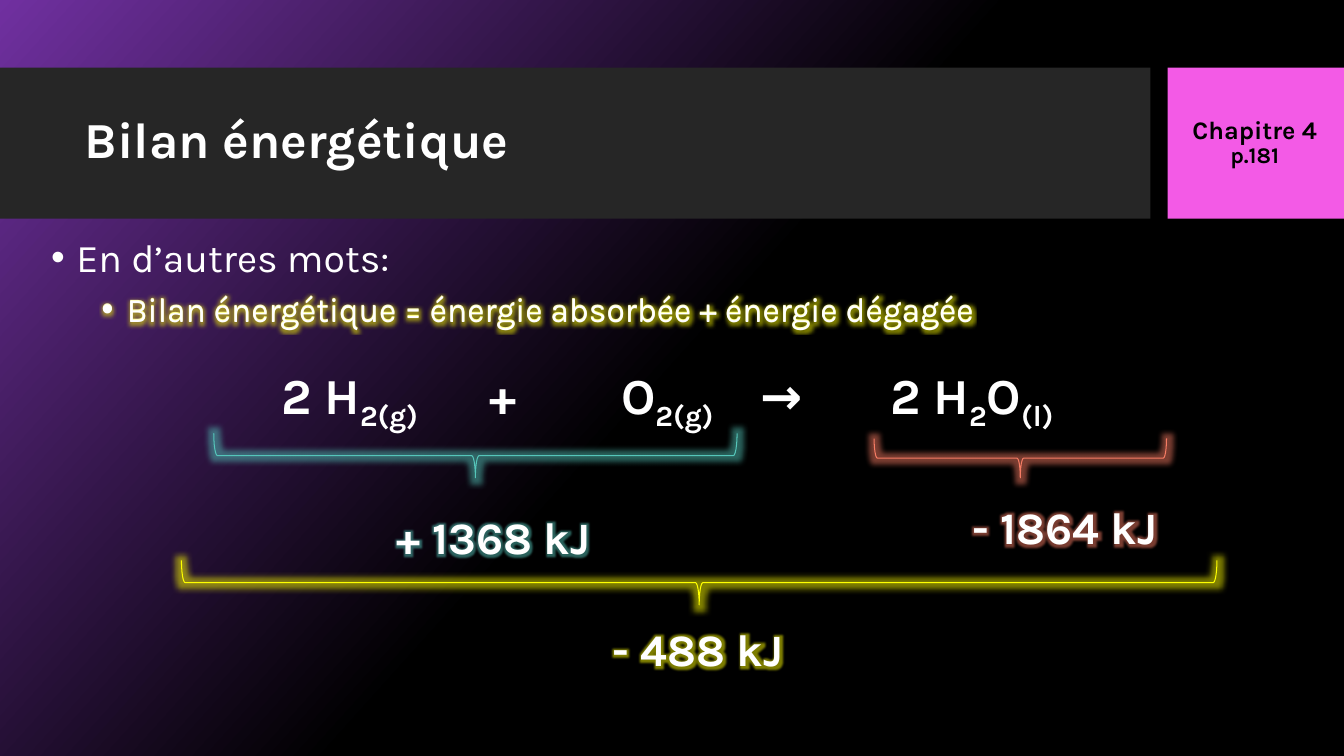
import pptx
import pptx.util
import pptx.dml.color
import pptx.enum.shapes
import pptx.enum.text
import pptx.oxml
import pptx.oxml.ns

Inches, Pt = pptx.util.Inches, pptx.util.Pt
RGBColor = pptx.dml.color.RGBColor
SHAPE = pptx.enum.shapes.MSO_SHAPE
ALIGN = pptx.enum.text.PP_ALIGN
ANCHOR = pptx.enum.text.MSO_ANCHOR

PURPLE = RGBColor(0x70, 0x30, 0xA0)
BLACK = RGBColor(0, 0, 0)
WHITE = RGBColor(0xFF, 0xFF, 0xFF)
CHARCOAL = RGBColor(0x26, 0x26, 0x26)
PINK = RGBColor(0xF3, 0x5A, 0xE6)
TEAL = RGBColor(0x55, 0xC6, 0xBA)
CORAL = RGBColor(0xF6, 0x7C, 0x64)
YELLOW = RGBColor(0xFF, 0xFF, 0)
FONT = "Karla"
BALANCE = "Bilan énergétique = énergie absorbée + énergie dégagée"


def drawing_element(markup):
    namespace = pptx.oxml.ns.nsdecls("a")
    return pptx.oxml.parse_xml(markup.replace("/>", f" {namespace}/>", 1)
                               if markup.endswith("/>") and markup.count("<") == 1
                               else markup.replace(">", f" {namespace}>", 1))


def glow_effect(color):
    return drawing_element(
        f'<a:effectLst><a:glow rad="101600"><a:srgbClr val="{color}">'
        '<a:alpha val="50000"/></a:srgbClr></a:glow></a:effectLst>')


def add_text_box(page, left, top, width, height, anchor=ANCHOR.TOP):
    box = page.shapes.add_textbox(Inches(left), Inches(top), Inches(width), Inches(height))
    box.text_frame.word_wrap = True
    box.text_frame.vertical_anchor = anchor
    return box.text_frame


def add_span(para, text, size, color=WHITE, bold=False, glow=None, baseline=None):
    span = para.add_run()
    span.text = text
    span.font.name = FONT
    span.font.size = Pt(size)
    span.font.bold = bold
    span.font.color.rgb = color
    properties = span.font._element
    if glow is not None:
        properties.find(pptx.oxml.ns.qn("a:solidFill")).addnext(glow_effect(glow))
    if baseline:
        properties.set("baseline", str(baseline * 1000))


def set_bullet(para, indent, level=0):
    para.level = level
    properties = para._p.get_or_add_pPr()
    properties.set("marL", str(Inches(indent)))
    properties.set("indent", str(Inches(-0.25)))
    properties.append(drawing_element('<a:buFont typeface="Arial"/>'))
    properties.append(drawing_element('<a:buChar char="•"/>'))


def add_background(page):
    fill = page.background.fill
    fill.gradient()
    fill.gradient_angle = 318
    for stop, color, position in zip(fill.gradient_stops, (PURPLE, BLACK), (0, 0.5)):
        stop.color.rgb = color
        stop.position = position


def add_panel(page, left, top, width, height, color):
    panel = page.shapes.add_shape(SHAPE.RECTANGLE, Inches(left), Inches(top),
                                  Inches(width), Inches(height))
    panel.shadow.inherit = False
    panel.fill.solid()
    panel.fill.fore_color.rgb = color
    panel.line.fill.background()


def add_header(page, top, height):
    # Title band
    add_panel(page, 0, top, 11.41, height, CHARCOAL)
    title = add_text_box(page, 0.74, top + 0.15, 10.51, 1.18, ANCHOR.MIDDLE).paragraphs[0]
    title.line_spacing = 0.9
    add_span(title, "Bilan énergétique", 36, bold=True)

    # Chapter tag
    add_panel(page, 11.58, top, 1.75, height, PINK)
    tag = add_text_box(page, 11.56, top, 1.77, height, ANCHOR.MIDDLE)
    lines = (("Chapitre 4", 18), ("p.181", 16))
    for para, (text, size) in zip((tag.paragraphs[0], tag.add_paragraph()), lines):
        para.alignment = ALIGN.CENTER
        para.line_spacing = 0.9
        add_span(para, text, size, BLACK, bold=True)


def add_definition(page, left, top):
    body = add_text_box(page, left, top, 12.43, 1.23)
    set_bullet(body.paragraphs[0], 0.25)
    add_span(body.paragraphs[0], "En d’autres mots:", 28)
    detail = body.add_paragraph()
    detail.space_before = Pt(5)
    highlight = add_text_box(page, left, top + 0.55, 9.45, 0.57).paragraphs[0]
    for para, glow in ((detail, None), (highlight, YELLOW)):
        set_bullet(para, 0.75, level=1)
        add_span(para, BALANCE, 24, glow=glow)


def add_equation(page, left, top, width, height):
    frame = add_text_box(page, left, top, width, height, ANCHOR.MIDDLE)
    frame.margin_left = Inches(2.38)
    para = frame.paragraphs[0]
    para.line_spacing = 0.9
    stops = "".join(f'<a:tab pos="{Inches(stop)}" algn="l"/>'
                    for stop in (2.07, 3.37, 4.75, 6.04))
    para._p.get_or_add_pPr().append(drawing_element(f"<a:tabLst>{stops}</a:tabLst>"))
    for text, baseline in (("2 H", 0), ("2(g)", -25), ("\t+\tO", 0), ("2(g)", -25),
                           ("\t→\t2 H", 0), ("2", -25), ("O", 0), ("(l)", -25)):
        add_span(para, text, 36, bold=True, baseline=baseline)


def add_energy(page, left, top, width, height, color, label, label_left, label_top):
    # Brace turned to point down, sharing its centre with the given box
    brace = page.shapes.add_shape(
        SHAPE.LEFT_BRACE, Inches(left + (width - height) / 2),
        Inches(top + (height - width) / 2), Inches(height), Inches(width))
    brace.rotation = 270
    brace.fill.background()
    brace.line.color.rgb = color
    brace.line.width = Pt(0.75)
    brace._element.spPr.append(glow_effect(color))

    # Energy value
    para = add_text_box(page, label_left, label_top, 2.61, 0.64).paragraphs[0]
    para.alignment = ALIGN.CENTER
    add_span(para, label, 32, bold=True, glow=color)


def build_balance_slide(deck):
    page = deck.slides.add_slide(deck.slide_layouts[6])
    add_background(page)
    add_header(page, 0.67, 1.5)
    add_definition(page, 0.41, 2.27)
    add_equation(page, 0.41, 3.56, 12.43, 0.73)
    add_energy(page, 2.12, 4.3, 5.19, 0.44, TEAL, "+ 1368 kJ", 3.59, 5.01)
    add_energy(page, 8.67, 4.35, 2.9, 0.39, CORAL, "- 1864 kJ", 9.26, 4.91)
    add_energy(page, 1.8, 5.56, 10.27, 0.44, YELLOW, "- 488 kJ", 5.62, 6.12)


def main():
    deck = pptx.Presentation()
    deck.slide_width, deck.slide_height = Inches(13.33), Inches(7.5)
    build_balance_slide(deck)
    deck.save("out.pptx")


if __name__ == "__main__":
    main()
